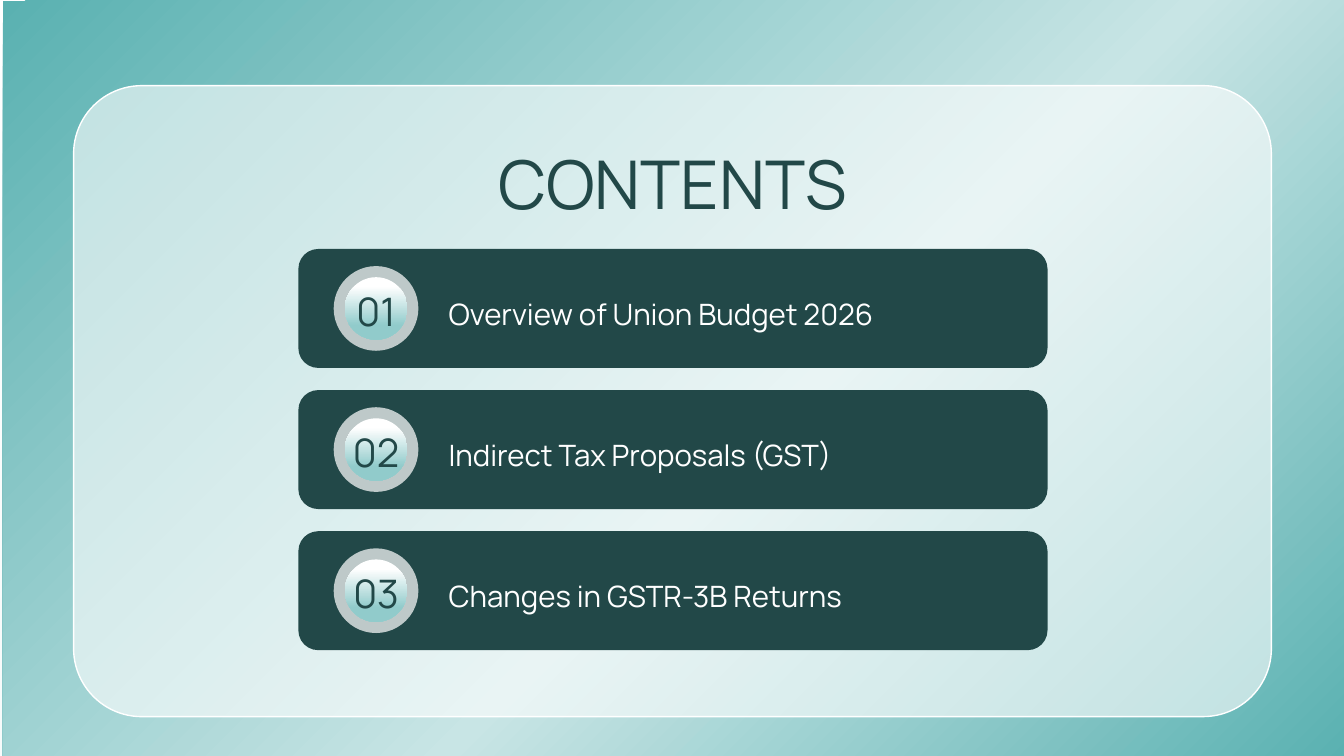
from lxml import etree
from pptx import Presentation
from pptx.dml.color import RGBColor
from pptx.enum.shapes import MSO_SHAPE
from pptx.enum.text import MSO_ANCHOR, PP_ALIGN
from pptx.oxml.ns import qn
from pptx.util import Inches, Pt

RECT, ROUNDED, OVAL = MSO_SHAPE.RECTANGLE, MSO_SHAPE.ROUNDED_RECTANGLE, MSO_SHAPE.OVAL
LEFT, CENTER = PP_ALIGN.LEFT, PP_ALIGN.CENTER
MIDDLE = MSO_ANCHOR.MIDDLE

# Content
TITLE = "CONTENTS"
TOPICS = [
    ("01", "Overview of Union Budget 2026"),
    ("02", "Indirect Tax Proposals (GST)"),
    ("03", "Changes in GSTR-3B Returns"),
]

# Style
FONT = "Manrope"
WHITE = RGBColor(0xFF, 0xFF, 0xFF)
DARK_TEAL = RGBColor(0x22, 0x48, 0x48)
TEAL = RGBColor(0x5A, 0xB1, 0xB1)
SOFT_TEAL = RGBColor(0x91, 0xCB, 0xCB)
PALE_TEAL = RGBColor(0xC8, 0xE5, 0xE5)

# Layout in inches
SLIDE_W, SLIDE_H = 13.33, 7.5
BAR_LEFT, BAR_TOP, BAR_W, BAR_H = 2.96, 2.47, 7.43, 1.18
BAR_PITCH = 1.4
BADGE_X = 3.73
RING, DISC = 0.84, 0.62
NUMBER_W = 1.3
TOPIC_LEFT, TOPIC_W, TOPIC_H = 4.45, 5.44, 0.8

prs = Presentation()
prs.slide_width, prs.slide_height = Inches(SLIDE_W), Inches(SLIDE_H)
slide = prs.slides.add_slide(prs.slide_layouts[6])


def set_alpha(color_parent, percent):
    color = color_parent.find(qn("a:srgbClr"))
    etree.SubElement(color, qn("a:alpha"), val=str(percent * 1000))


def add_panel(kind, left, top, width, height, color=None, alpha=100):
    panel = slide.shapes.add_shape(
        kind, Inches(left), Inches(top), Inches(width), Inches(height))
    panel.shadow.inherit = False
    panel.line.fill.background()
    if color is not None:
        panel.fill.solid()
        panel.fill.fore_color.rgb = color
        if alpha < 100:
            set_alpha(panel.element.spPr.find(qn("a:solidFill")), alpha)
    return panel


def set_gradient(panel, stops, angle, alpha=100):
    panel.fill.gradient()
    gradient = panel.element.spPr.find(qn("a:gradFill"))
    stop_list = gradient.find(qn("a:gsLst"))
    for old_stop in list(stop_list):
        stop_list.remove(old_stop)
    for position, color in stops:
        stop = etree.SubElement(stop_list, qn("a:gs"), pos=str(position * 1000))
        etree.SubElement(stop, qn("a:srgbClr"), val=str(color))
        if alpha < 100:
            set_alpha(stop, alpha)
    gradient.find(qn("a:lin")).set("ang", str(angle * 60000))


def add_text(text, left, top, width, height, size, color, align, spacing):
    box = slide.shapes.add_textbox(
        Inches(left), Inches(top), Inches(width), Inches(height))
    frame = box.text_frame
    frame.word_wrap = True
    frame.vertical_anchor = MIDDLE
    frame.margin_left = frame.margin_right = 0
    frame.margin_top = frame.margin_bottom = 0
    paragraph = frame.paragraphs[0]
    paragraph.text = text
    paragraph.alignment = align
    paragraph.line_spacing = spacing
    paragraph.font.name = FONT
    paragraph.font.size = Pt(size)
    paragraph.font.color.rgb = color


# Background
base = add_panel(RECT, 0, 0, SLIDE_W, SLIDE_H)
set_gradient(base, [(0, WHITE), (100, PALE_TEAL)], 45, alpha=40)
backdrop = add_panel(RECT, 0.03, 0.01, SLIDE_W, SLIDE_H)
set_gradient(backdrop, [(0, TEAL), (57, PALE_TEAL), (100, TEAL)], 45)

# Frosted card and title
card = add_panel(ROUNDED, 0.73, 0.85, 11.88, 6.26, WHITE, alpha=60)
card.adjustments[0] = 0.108
card.line.color.rgb = WHITE
card.line.width = Pt(1)
add_text(TITLE, 4.34, 1.23, 4.66, 1.08, 48, DARK_TEAL, CENTER, 1.1)

# Topic bars with numbered badges
for row, (number, topic) in enumerate(TOPICS):
    top = BAR_TOP + row * BAR_PITCH
    middle = top + BAR_H / 2
    add_panel(ROUNDED, BAR_LEFT, top, BAR_W, BAR_H, DARK_TEAL)
    add_panel(OVAL, BADGE_X - RING / 2, middle - RING / 2, RING, RING, WHITE, alpha=71)
    disc = add_panel(OVAL, BADGE_X - DISC / 2, middle - DISC / 2, DISC, DISC)
    set_gradient(disc, [(15, WHITE), (77, SOFT_TEAL)], 90)
    add_text(number, BADGE_X - NUMBER_W / 2, top, NUMBER_W, BAR_H,
             28, DARK_TEAL, CENTER, 1.1)
    add_text(topic, TOPIC_LEFT, middle - TOPIC_H / 2, TOPIC_W, TOPIC_H,
             21, WHITE, LEFT, 1.3)

prs.save("out.pptx")
